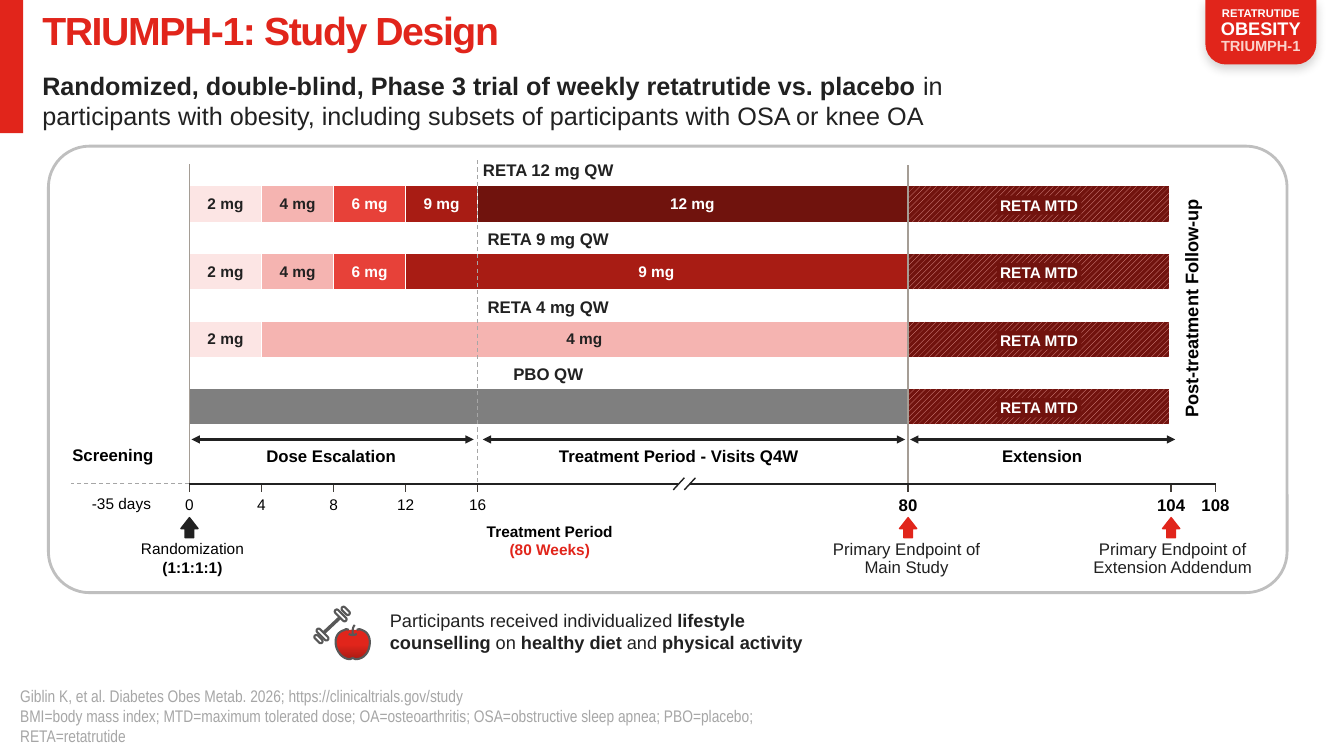
from dataclasses import dataclass
from itertools import pairwise
from typing import Any, Optional

from lxml.etree import SubElement
from pptx import Presentation
from pptx.dml.color import RGBColor
from pptx.enum.dml import MSO_LINE, MSO_PATTERN
from pptx.enum.shapes import MSO_CONNECTOR, MSO_SHAPE as Preset
from pptx.enum.text import MSO_ANCHOR as Anchor, PP_ALIGN as Align
from pptx.oxml.ns import qn
from pptx.util import Cm, Pt

RED, DARK_RED, MAROON = "E1251B", "A81C14", "71130E"
INK, BLACK, WHITE, GREY, BROWN, ICON = "212121", "000000", "FFFFFF", "A6A6A6", "A59D95", "585858"
PLAIN_TABLE = "{2D5ABB26-0587-4C30-8999-92F81FD0307C}"
DOSES = {"2 mg": ("FCE5E4", INK), "4 mg": ("F5B4B1", INK), "6 mg": ("E74139", WHITE),
         "9 mg": (DARK_RED, WHITE), "12 mg": ("70130D", WHITE), "": ("7F7F7F", WHITE)}
START, STEP, MAIN_END = 1.88, 0.715, 9.01
ESCALATION_END = START + 4 * STEP
AXIS_Y, ARROW_Y = 4.8, 4.36
BAR_TOP, BAR_PITCH, BAR_HEIGHT = 1.85, 0.67, 0.35
WEEKS = {0: START, 4: START + STEP, 8: START + 2 * STEP, 12: START + 3 * STEP,
         16: ESCALATION_END, 80: MAIN_END, 104: 11.62, 108: 12.06}


@dataclass
class Span:
    text: str
    size: float = 12
    colour: str = BLACK
    bold: bool = False
    font: str = "Arial"


@dataclass
class Arm:
    label: str
    doses: list[str]
    label_height: float = 0.3


@dataclass
class Caption:
    at: tuple[float, float, float, float]
    spans: list[Span]
    format: dict[str, Any]


@dataclass
class Line:
    ends: tuple[float, float, float, float]
    colour: str = INK
    width: float = 1
    dashed: bool = False
    arrows: bool = False


CENTRED = {"alignment": Align.CENTER}
TIGHT = {"alignment": Align.CENTER, "line_spacing": 0.9}
ARMS = [
    Arm("RETA 12 mg QW", ["2 mg", "4 mg", "6 mg", "9 mg", "12 mg"], 0.33),
    Arm("RETA 9 mg QW", ["2 mg", "4 mg", "6 mg", "9 mg"]),
    Arm("RETA 4 mg QW", ["2 mg", "4 mg"]),
    Arm("PBO QW", [""]),
]
CAPTIONS = [
    Caption((0.38, 4.36, 1.48, 0.3), [Span("Screening", bold=True)], CENTRED),
    Caption((1.89, 4.37, 2.79, 0.3), [Span("Dose Escalation", bold=True)], CENTRED),
    Caption((4.6, 4.37, 4.27, 0.3), [Span("Treatment Period - Visits Q4W", bold=True)], CENTRED),
    Caption((9.02, 4.37, 2.64, 0.3), [Span("Extension", bold=True)], CENTRED),
    Caption((0.53, 4.85, 1.35, 0.32), [Span("-35 days", 11)], CENTRED),
    Caption((0.82, 5.3, 2.18, 0.47),
            [Span("Randomization\n", 11), Span("(1:1:1:1)", 11, bold=True)], CENTRED),
    Caption((1.88, 5.13, 7.15, 0.53),
            [Span("Treatment Period\n", 11, bold=True), Span("(80 Weeks)", 11, RED, True)], CENTRED),
    Caption((8.08, 5.32, 1.83, 0.46), [Span("Primary Endpoint of Main Study", 12, INK)], TIGHT),
    Caption((10.68, 5.32, 1.91, 0.46),
            [Span("Primary Endpoint of\nExtension Addendum", 12, INK)], TIGHT),
    Caption((3.77, 6, 4.51, 0.54),
            [Span("Participants received individualized ", 13, INK),
             Span("lifestyle counselling", 13, INK, True), Span(" on ", 13, INK),
             Span("healthy diet ", 13, INK, True), Span("and ", 13, INK),
             Span("physical activity", 13, INK, True)], {}),
]
LINES = [
    Line((ESCALATION_END, 1.59, ESCALATION_END, AXIS_Y), GREY, 0.75, dashed=True),
    Line((START, AXIS_Y, 0.7, AXIS_Y), GREY, 0.75, dashed=True),
    Line((START, AXIS_Y, START, 1.63), BROWN),
    Line((MAIN_END, AXIS_Y, MAIN_END, 1.64), BROWN),
    *(Line((left, ARROW_Y, right, ARROW_Y), width=1.5, arrows=True)
      for left, right in [(1.9, 4.7), (4.79, 8.98), (9.03, 11.66)]),
    *(Line((x, AXIS_Y, x, AXIS_Y + 0.08), "413C37") for x in WEEKS.values()),
    *(Line((left, AXIS_Y, right, AXIS_Y))
      for left, right in [(START, 6.73), (6.85, MAIN_END), (MAIN_END, WEEKS[108])]),
    *(Line((x + 0.11, 4.74, x, 4.86)) for x in (6.68, 6.79)),
    Line((3.21, 6.28, 3.37, 6.13), ICON, 2.5),
]
# Each outline is a start point followed by cubic curves of three points.
APPLE = [(3.54, 6.25), (3.56, 6.24), (3.57, 6.24), (3.59, 6.25), (3.62, 6.26), (3.67, 6.29),
         (3.67, 6.37), (3.67, 6.47), (3.61, 6.54), (3.53, 6.54), (3.52, 6.54), (3.51, 6.53),
         (3.5, 6.53), (3.49, 6.53), (3.48, 6.54), (3.47, 6.54), (3.4, 6.54), (3.33, 6.46),
         (3.33, 6.37), (3.33, 6.29), (3.38, 6.26), (3.42, 6.25), (3.43, 6.24), (3.44, 6.24),
         (3.46, 6.25)]
STEM = [(3.5, 6.29), (3.5, 6.29), (3.49, 6.23), (3.52, 6.2)]
DIMPLE = [(3.46, 6.29), (3.46, 6.29), (3.48, 6.3), (3.5, 6.3), (3.52, 6.3), (3.54, 6.29), (3.54, 6.29)]


def lengths(*inches: float) -> list[Cm]:
    return [Cm(2.54 * value) for value in inches]


def rgb(colour: str) -> RGBColor:
    return RGBColor.from_string(colour)


def apply(target: Any, values: dict[str, Any]) -> None:
    for name, value in values.items():
        setattr(target, name, value)


def write(frame: Any, spans: list[Span], insets: tuple = (0.1, 0.05, 0.1, 0.05),
          anchor: Any = Anchor.TOP, **format: Any) -> None:
    """Fill a text frame or cell; a line feed in a span starts a paragraph."""
    sides = ("margin_left", "margin_top", "margin_right", "margin_bottom")
    apply(frame, dict(zip(sides, lengths(*insets)), vertical_anchor=anchor, word_wrap=True))
    text = getattr(frame, "text_frame", frame)
    para = text.paragraphs[0]
    apply(para, format)
    for span in spans:
        for number, piece in enumerate(span.text.split("\n")):
            if number:
                para = text.add_paragraph()
                apply(para, format)
            if piece:
                run = para.add_run()
                run.text = piece
                apply(run.font, {"name": span.font, "size": Pt(span.size), "bold": span.bold})
                run.font.color.rgb = rgb(span.colour)


def add_text(page: Any, at: tuple, spans: list[Span], **options: Any) -> Any:
    box = page.shapes.add_textbox(*lengths(*at))
    write(box.text_frame, spans, **options)
    return box


def paint(shape: Any, fill: Optional[str] = None, line: Optional[str] = None, width: float = 1) -> None:
    shape.shadow.inherit = False
    if fill:
        shape.fill.solid()
        shape.fill.fore_color.rgb = rgb(fill)
    else:
        shape.fill.background()
    if line:
        shape.line.color.rgb, shape.line.width = rgb(line), Pt(width)
    else:
        shape.line.fill.background()


def add_preset(page: Any, preset: Any, at: tuple, adjust: tuple = (), rotation: float = 0,
               **colours: Any) -> Any:
    shape = page.shapes.add_shape(preset, *lengths(*at))
    for number, value in enumerate(adjust):
        shape.adjustments[number] = value
    shape.rotation = rotation
    paint(shape, **colours)
    return shape


def add_line(page: Any, line: Line) -> None:
    connector = page.shapes.add_connector(MSO_CONNECTOR.STRAIGHT, *lengths(*line.ends))
    connector.line.color.rgb, connector.line.width = rgb(line.colour), Pt(line.width)
    if line.dashed:
        connector.line.dash_style = MSO_LINE.DASH
    if line.arrows:
        for end in ("a:headEnd", "a:tailEnd"):
            SubElement(connector.line._get_or_add_ln(), qn(end), type="triangle")
    SubElement(connector._element.spPr, qn("a:effectLst"))


def add_curve(page: Any, outline: list[tuple[float, float]]) -> Any:
    points = [outline[0]]
    for first in range(0, len(outline) - 1, 3):
        curve = outline[first:first + 4]
        for t in (step / 8 for step in range(1, 9)):
            weights = ((1 - t) ** 3, 3 * t * (1 - t) ** 2, 3 * t * t * (1 - t), t ** 3)
            points.append(tuple(sum(w * p[axis] for w, p in zip(weights, curve)) for axis in (0, 1)))
    start, *rest = [lengths(*point) for point in points]
    builder = page.shapes.build_freeform(*start)
    builder.add_line_segments(rest, close=False)
    shape = builder.convert_to_shape()
    paint(shape, line=ICON, width=1.5)
    return shape


def add_bar(page: Any, top: float, label_height: float, edges: list[float]) -> Any:
    """Add a plain table with a label row above a row of bar cells."""
    at = lengths(edges[0], top - label_height, edges[-1] - edges[0], label_height + BAR_HEIGHT)
    table = page.shapes.add_table(2, len(edges) - 1, *at).table
    apply(table, {"first_row": False, "horz_banding": False})
    table._tbl.tblPr[0].text = PLAIN_TABLE
    for row, height in zip(table.rows, lengths(label_height, BAR_HEIGHT)):
        row.height = height
    for column, (left, right) in zip(table.columns, pairwise(edges)):
        column.width = lengths(right - left)[0]
    for cell in table.iter_cells():
        write(cell, [], (0, 0, 0, 0))
        cell.fill.background()
    return table


def add_cell_edge(cell: Any, side: str) -> None:
    properties = cell._tc.get_or_add_tcPr()
    edge = SubElement(properties, qn(side), w=str(Pt(1)))
    SubElement(SubElement(edge, qn("a:solidFill")), qn("a:srgbClr"), val=WHITE)
    properties.insert(0, edge)


def add_arm(page: Any, arm: Arm, top: float) -> None:
    edges = [START + STEP * number for number in range(len(arm.doses))] + [MAIN_END - 0.01]
    table = add_bar(page, top, arm.label_height, edges)
    last = len(arm.doses) - 1
    if last:
        table.cell(0, 0).merge(table.cell(0, last))
    write(table.cell(0, 0), [Span(arm.label, 12, INK, True)], (0, 0.02, 0, 0), Anchor.MIDDLE, **CENTRED)
    for number, dose in enumerate(arm.doses):
        cell = table.cell(1, number)
        fill, ink = DOSES[dose]
        write(cell, [Span(dose, 11, ink, True)], (0, 0, 0, 0), Anchor.MIDDLE, **CENTRED)
        cell.fill.solid()
        cell.fill.fore_color.rgb = rgb(fill)
        if number < last:
            add_cell_edge(cell, "a:lnR")
        if number:
            add_cell_edge(cell, "a:lnL")

    hatch = add_bar(page, top, arm.label_height, [9.02, 11.6]).cell(1, 0).fill
    hatch.patterned()
    hatch.pattern = MSO_PATTERN.WIDE_UPWARD_DIAGONAL
    hatch.fore_color.rgb, hatch.back_color.rgb = rgb("F4A7A3"), rgb(MAROON)
    tag = add_preset(page, Preset.RECTANGLE, (9.89, top + 0.09, 0.84, 0.19), fill=MAROON)
    write(tag.text_frame, [Span("RETA MTD", 11, WHITE, True)], (0.02, 0, 0.02, 0), Anchor.MIDDLE, **CENTRED)
    tag.text_frame.word_wrap = False


def add_header(page: Any) -> None:
    add_preset(page, Preset.RECTANGLE, (0, 0, 0.23, 1.32), fill=RED)
    badge = add_preset(page, Preset.ROUND_2_SAME_RECTANGLE, (11.96, 0, 1.1, 0.64), (0, 0.319), fill=RED)
    shadow = SubElement(badge._element.spPr.find(qn("a:effectLst")), qn("a:outerShdw"),
                        blurRad=str(Pt(7)), dist=str(Pt(3)), dir="5400000", algn="t", rotWithShape="0")
    SubElement(SubElement(shadow, qn("a:srgbClr"), val=INK), qn("a:alpha"), val="20000")
    write(badge.text_frame, [Span("RETATRUTIDE\n", 8, WHITE, True), Span("OBESITY\n", 13, WHITE, True),
                             Span("TRIUMPH-1", 10.5, "FBD2CB", True)],
          (0.08, 0.1, 0.08, 0.06), Anchor.MIDDLE, **TIGHT)
    title = page.shapes.title
    apply(title, dict(zip(("left", "top", "width", "height"), lengths(0.42, 0.12, 10.83, 0.42))))
    write(title.text_frame, [Span("TRIUMPH-1: Study Design", 28, RED, True)], (0, 0, 0, 0),
          alignment=Align.LEFT, line_spacing=0.9)
    title.text_frame.paragraphs[0].runs[0].font._element.set("spc", "-100")
    add_text(page, (0.42, 0.7, 10.16, 0.66),
             [Span("Randomized, double-blind, Phase 3 trial of weekly retatrutide vs. placebo ", 18, INK, True),
              Span("in participants with obesity, including subsets of participants with OSA or knee OA", 18, INK)],
             insets=(0, 0, 0.2, 0))


def main() -> None:
    deck = Presentation()
    deck.slide_width, deck.slide_height = Cm(33.87), Cm(19.05)
    page = deck.slides.add_slide(deck.slide_layouts[5])
    add_header(page)
    for number, arm in enumerate(ARMS):
        add_arm(page, arm, BAR_TOP + BAR_PITCH * number)
    for line in LINES:
        add_line(page, line)
    for caption in CAPTIONS:
        add_text(page, caption.at, caption.spans, **caption.format)
    for week, x in WEEKS.items():
        endpoint = week >= 80
        add_text(page, (x - 0.28, 4.91, 0.56, 0.21), [Span(str(week), 12 if endpoint else 11, bold=endpoint)],
                 insets=(0.04, 0, 0.04, 0), **CENTRED)
    for week, colour in {0: INK, 80: RED, 104: RED}.items():
        add_preset(page, Preset.RIGHT_ARROW, (WEEKS[week] - 0.1, 5.15, 0.2, 0.17), (0.5, 0.638), 270,
                   fill=colour, line=colour)
    follow_up = add_text(page, (10.32, 2.9, 3, 0.32), [Span("Post-treatment Follow-up", 13, bold=True)], **CENTRED)
    follow_up.rotation = 270
    add_preset(page, Preset.ROUNDED_RECTANGLE, (0.48, 1.45, 12.29, 4.43), (0.092,), line="BFBFBF", width=2)

    apple = add_curve(page, APPLE).fill
    apple.gradient()
    apple.gradient_angle = 270
    for stop, colour, position in zip(apple.gradient_stops, (RED, DARK_RED), (0.52, 1)):
        stop.color.rgb, stop.position = rgb(colour), position
    for outline in (STEM, DIMPLE):
        add_curve(page, outline)
    for left, top, height in [(3.18, 6.22, 0.15), (3.36, 6.03, 0.15), (3.14, 6.29, 0.1), (3.41, 6.01, 0.1)]:
        add_preset(page, Preset.ROUNDED_RECTANGLE, (left, top, 0.04, height), (0.5,), 315, line=ICON, width=1.5)
    add_text(page, (0.2, 7, 7.83, 0.4),
             [Span("Giblin K, et al. Diabetes Obes Metab. 2026; https://clinicaltrials.gov/study\n"
                   "BMI=body mass index; MTD=maximum tolerated dose; OA=osteoarthritis; "
                   "OSA=obstructive sleep apnea; PBO=placebo; RETA=retatrutide", 12, GREY, font="Arial Narrow")],
             insets=(0, 0, 0, 0), anchor=Anchor.BOTTOM)
    deck.save("out.pptx")


if __name__ == "__main__":
    main()
